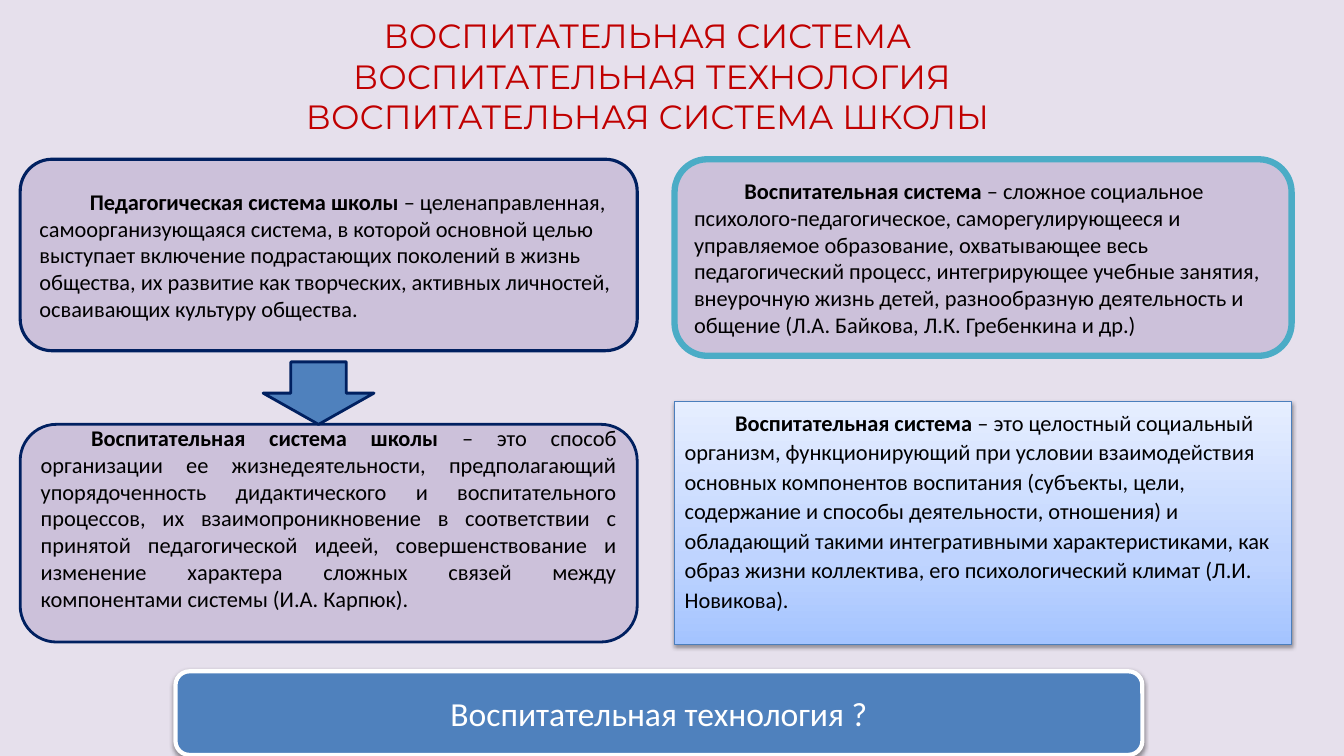
from dataclasses import dataclass
from typing import Any

import lxml.etree
import pptx
import pptx.dml.color
import pptx.enum.shapes
import pptx.enum.text
import pptx.oxml.ns
import pptx.util

SCALE = 9144  # EMU in one px, 100 px to the inch
COLOURS = {
    "page": "E6E0EC", "title": "C00000", "text": "000000", "white": "FFFFFF",
    "lilac": "CCC1DA", "navy": "002060", "teal": "4BACC6", "blue": "4F81BD",
    "edge": "4B7EBC", "deep": "A4C4FF", "middle": "BFD4FF", "pale": "E6EEFF",
}
GRADIENT = [(0, "deep"), (0.35, "middle"), (1, "pale")]
SHAPES = pptx.enum.shapes.MSO_SHAPE
ALIGN = pptx.enum.text.PP_ALIGN
ANCHOR = pptx.enum.text.MSO_ANCHOR
qn = pptx.oxml.ns.qn


@dataclass
class Panel:
    """A filled outline holding one paragraph: a term and its meaning."""
    area: tuple[int, int, int, int]
    line: str
    width: float
    fill: str = "lilac"
    kind: Any = SHAPES.ROUNDED_RECTANGLE
    term: str = ""
    meaning: str = ""
    size: int = 16
    colour: str = "text"
    align: Any = ALIGN.LEFT
    tab: int = 50
    bottom: int = 5
    shadow: bool = False


PANELS = [
    Panel((20, 158, 612, 190), "navy", 2.25,
          term="\tПедагогическая система школы ",
          meaning="– целенаправленная, самоорганизующаяся система, в которой "
          "основной целью выступает включение подрастающих поколений в жизнь "
          "общества, их развитие как творческих, активных личностей, "
          "осваивающих культуру общества."),
    Panel((669, 158, 612, 195), "teal", 4.5,
          term="\tВоспитательная система ",
          meaning="– сложное социальное психолого-педагогическое, "
          "саморегулирующееся и управляемое образование, охватывающее весь "
          "педагогический процесс, интегрирующее учебные занятия, внеурочную "
          "жизнь детей, разнообразную деятельность и общение (Л.А. Байкова, "
          "Л.К. Гребенкина и др.)"),
    Panel((20, 421, 612, 216), "navy", 2, align=ALIGN.JUSTIFY, bottom=35,
          term="\tВоспитательная система школы ",
          meaning="– это способ организации ее жизнедеятельности, "
          "предполагающий упорядоченность дидактического и воспитательного "
          "процессов, их взаимопроникновение в соответствии с принятой "
          "педагогической идеей, совершенствование и изменение характера "
          "сложных связей между компонентами системы (И.А. Карпюк)."),
    Panel((261, 359, 110, 62), "navy", 2, "blue", SHAPES.DOWN_ARROW),
    Panel((174, 666, 959, 83), "white", 3, "blue", shadow=True,
          meaning="Воспитательная технология ?", size=24, colour="white",
          align=ALIGN.CENTER),
]
ORGANISM = Panel(
    (669, 398, 612, 241), "edge", 0.75, tab=100, shadow=True,
    term="\tВоспитательная система ",
    meaning="– это целостный социальный организм, функционирующий при условии "
    "взаимодействия основных компонентов воспитания (субъекты, цели, "
    "содержание и способы деятельности, отношения) и обладающий такими "
    "интегративными характеристиками, как образ жизни коллектива, его "
    "психологический климат (Л.И. Новикова).")


def px(length: int) -> int:
    return pptx.util.Emu(length * SCALE)


def rgb(name: str) -> pptx.dml.color.RGBColor:
    return pptx.dml.color.RGBColor.from_string(COLOURS[name])


def apply(target: Any, values: dict[str, Any]) -> None:
    for name, value in values.items():
        setattr(target, name, value)


def place(shape: Any, area: tuple[int, int, int, int]) -> None:
    apply(shape, dict(zip(("left", "top", "width", "height"), map(px, area))))


def add_span(para: Any, text: str, font: str, size: int, colour: str, bold: bool) -> None:
    span = para.add_run()
    span.text = text
    apply(span.font, {"name": font, "size": pptx.util.Pt(size), "bold": bold})
    span.font.color.rgb = rgb(colour)


def write_panel(shape: Any, panel: Panel) -> Any:
    frame = shape.text_frame
    apply(frame, {"word_wrap": True, "auto_size": pptx.enum.text.MSO_AUTO_SIZE.NONE,
                  "vertical_anchor": ANCHOR.MIDDLE, "margin_bottom": px(panel.bottom)})
    para = frame.paragraphs[0]
    para.alignment = panel.align
    if panel.term:
        add_span(para, panel.term, "Calibri", panel.size, panel.colour, True)
    add_span(para, panel.meaning, "Calibri", panel.size, panel.colour, False)
    return para


def set_tab(para: Any, position: int) -> None:
    tabs = lxml.etree.SubElement(para._p.get_or_add_pPr(), qn("a:tabLst"))
    lxml.etree.SubElement(tabs, qn("a:tab"), pos=str(px(position)), algn="l")


def outline(shape: Any, panel: Panel) -> None:
    shape.line.color.rgb = rgb(panel.line)
    shape.line.width = pptx.util.Pt(panel.width)


def set_shadow(shape: Any, panel: Panel) -> None:
    properties = shape._element.spPr
    if properties.find(qn("a:effectLst")) is None:
        lxml.etree.SubElement(properties, qn("a:effectLst"))
    if panel.shadow:
        cast = lxml.etree.SubElement(
            properties.find(qn("a:effectLst")), qn("a:outerShdw"),
            blurRad="40000", dist="20000", dir="5400000", rotWithShape="0")
        black = lxml.etree.SubElement(cast, qn("a:srgbClr"), val=COLOURS["text"])
        lxml.etree.SubElement(black, qn("a:alpha"), val="38000")


def add_panel(page: Any, panel: Panel) -> None:
    shape = page.shapes.add_shape(panel.kind, *map(px, panel.area))
    shape.fill.solid()
    shape.fill.fore_color.rgb = rgb(panel.fill)
    outline(shape, panel)
    shape.shadow.inherit = False
    set_shadow(shape, panel)
    if panel.meaning:
        para = write_panel(shape, panel)
        if panel.term:
            set_tab(para, panel.tab)


def fill_title(title: Any) -> None:
    place(title, (22, 1, 1249, 148))
    title.text_frame.vertical_anchor = ANCHOR.MIDDLE
    para = title.text_frame.paragraphs[0]
    para.alignment = ALIGN.CENTER
    lines = ["ВОСПИТАТЕЛЬНАЯ СИСТЕМА ", "ВОСПИТАТЕЛЬНАЯ ТЕХНОЛОГИЯ",
             "ВОСПИТАТЕЛЬНАЯ СИСТЕМА ШКОЛЫ "]
    for number, line in enumerate(lines):
        if number:
            para.add_line_break()
        add_span(para, line, "Montserrat", 24, "title", False)


def fill_body(body: Any, panel: Panel) -> None:
    place(body, panel.area)
    body.fill.gradient()
    body.fill.gradient_angle = 90
    stops = body._element.spPr.find(".//" + qn("a:gsLst"))
    for stop in list(stops):
        stops.remove(stop)
    for position, colour in GRADIENT:
        stop = lxml.etree.SubElement(stops, qn("a:gs"), pos=str(round(position * 100000)))
        lxml.etree.SubElement(stop, qn("a:srgbClr"), val=COLOURS[colour])
    outline(body, panel)
    set_shadow(body, panel)
    para = write_panel(body, panel)
    body.text_frame.vertical_anchor = ANCHOR.TOP
    apply(para, {"line_spacing": 1.1, "space_before": pptx.util.Pt(3.2)})
    settings = para._p.get_or_add_pPr()
    apply(settings, {})
    settings.set("marL", "0")
    settings.set("indent", "0")
    lxml.etree.SubElement(settings, qn("a:buNone"))
    set_tab(para, panel.tab)


def main() -> None:
    deck = pptx.Presentation()
    apply(deck, {"slide_width": px(1333), "slide_height": px(750)})
    page = deck.slides.add_slide(deck.slide_layouts[1])
    page.background.fill.solid()
    page.background.fill.fore_color.rgb = rgb("page")
    # Heading and the definition in the body placeholder
    fill_title(page.shapes.title)
    fill_body(page.placeholders[1], ORGANISM)
    # Definitions, arrow and closing question
    for panel in PANELS:
        add_panel(page, panel)
    deck.save("out.pptx")


if __name__ == "__main__":
    main()
